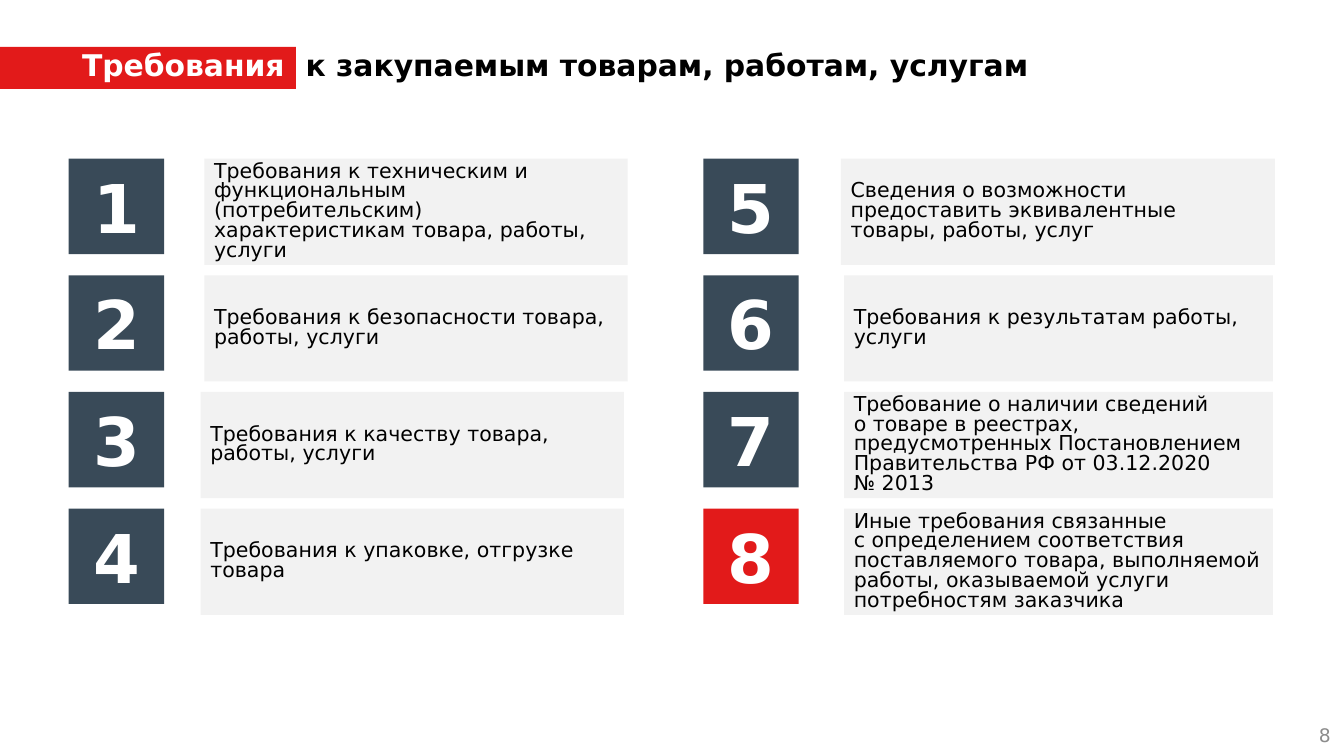
"""Build a slide listing eight procurement requirements in two columns."""
from dataclasses import dataclass

from pptx import Presentation
from pptx.dml.color import RGBColor
from pptx.enum import shapes, text
from pptx.util import Pt


@dataclass(frozen=True)
class Theme:
    """Colours, font and type sizes of the slide."""
    red: RGBColor = RGBColor(0xE2, 0x1A, 0x1A)
    slate: RGBColor = RGBColor(0x39, 0x4A, 0x58)
    panel: RGBColor = RGBColor(0xF2, 0xF2, 0xF2)
    white: RGBColor = RGBColor(0xFF, 0xFF, 0xFF)
    black: RGBColor = RGBColor(0, 0, 0)
    grey: RGBColor = RGBColor(0x8C, 0x8C, 0x8C)
    font: str = "DejaVu Sans"
    title: float = 16
    number: float = 36
    body: float = 11
    footer: float = 10


THEME = Theme()
ROW_TOP, ROW_PITCH = 85, 62.5
BADGE_SIZE, PANEL_HEIGHT = 51.1, 56.9

COLUMNS = [
    (36.8, [
        (109.5, 226.8, "Требования к техническим и функциональным (потребительским) "
                       "характеристикам товара, работы, услуги"),
        (109.5, 226.8, "Требования к безопасности товара, работы, услуги"),
        (107.5, 226.8, "Требования к качеству товара, работы, услуги"),
        (107.5, 226.8, "Требования к упаковке, отгрузке товара"),
    ]),
    (376.8, [
        (450.5, 232.5, "Сведения о возможности предоставить эквивалентные "
                       "товары, работы, услуг"),
        (452.2, 229.7, "Требования к результатам работы, услуги"),
        (452.2, 229.7, "Требование о наличии сведений \vо товаре в реестрах, "
                       "предусмотренных Постановлением Правительства РФ "
                       "от 03.12.2020 \v№ 2013"),
        (452.2, 229.7, "Иные требования связанные \vс определением соответствия "
                       "поставляемого товара, выполняемой работы, оказываемой "
                       "услуги потребностям заказчика"),
    ]),
]


def style_font(font, size, color, bold=False):
    """Apply the theme font with the given size, colour and weight."""
    font.name = THEME.font
    font.size = Pt(size)
    font.color.rgb = color
    font.bold = bold


def set_insets(frame, horizontal, vertical):
    """Set the inner margins of a text frame."""
    frame.margin_left = frame.margin_right = Pt(horizontal)
    frame.margin_top = frame.margin_bottom = Pt(vertical)


def add_block(slide, left, top, width, height, fill):
    """Add a flat filled rectangle."""
    shape = slide.shapes.add_shape(
        shapes.MSO_SHAPE.RECTANGLE, Pt(left), Pt(top), Pt(width), Pt(height))
    shape.shadow.inherit = False
    shape.fill.solid()
    shape.fill.fore_color.rgb = fill
    shape.line.fill.background()
    return shape


def write_block(shape, wording, alignment):
    """Write one vertically centred paragraph into a block."""
    frame = shape.text_frame
    frame.word_wrap = True
    frame.vertical_anchor = text.MSO_ANCHOR.MIDDLE
    set_insets(frame, 5.2, 2.6)
    paragraph = frame.paragraphs[0]
    paragraph.text = wording
    paragraph.alignment = alignment
    return paragraph


def add_title(slide):
    """Fill the title placeholder and lay it over a red band."""
    band = add_block(slide, 0, 25.2, 158.6, 22.5, THEME.red)
    title = slide.shapes.title
    band._element.addnext(title._element)
    title.left, title.top, title.width, title.height = (
        Pt(length) for length in (36.8, 21.6, 626.4, 26.6))
    frame = title.text_frame
    frame.word_wrap = True
    frame.auto_size = text.MSO_AUTO_SIZE.SHAPE_TO_FIT_TEXT
    frame.vertical_anchor = text.MSO_ANCHOR.TOP
    set_insets(frame, 7.2, 3.6)
    paragraph = frame.paragraphs[0]
    paragraph.alignment = text.PP_ALIGN.LEFT
    runs = []
    for wording, color in (("Требования", THEME.white), (" ", THEME.white),
                           ("к закупаемым товарам, работам, услугам", THEME.black)):
        run = paragraph.add_run()
        run.text = wording
        style_font(run.font, THEME.title, color, bold=True)
        runs.append(run)
    runs[1]._r.get_or_add_rPr().set("spc", "560")


def add_requirement(slide, number, badge_left, top, panel, badge_fill):
    """Add a numbered badge and the panel that describes it."""
    badge = add_block(slide, badge_left, top, BADGE_SIZE, BADGE_SIZE, badge_fill)
    paragraph = write_block(badge, str(number), text.PP_ALIGN.CENTER)
    style_font(paragraph.font, THEME.number, THEME.white, bold=True)
    left, width, wording = panel
    box = add_block(slide, left, top, width, PANEL_HEIGHT, THEME.panel)
    paragraph = write_block(box, wording, text.PP_ALIGN.LEFT)
    paragraph.line_spacing = 0.8
    style_font(paragraph.font, THEME.body, THEME.black)


def add_page_number(slide, number):
    """Add the page number in the bottom right corner."""
    box = slide.shapes.add_textbox(Pt(552.2), Pt(383), Pt(167.8), Pt(21.6))
    paragraph = write_block(box, str(number), text.PP_ALIGN.RIGHT)
    set_insets(box.text_frame, 7.2, 3.6)
    style_font(paragraph.font, THEME.footer, THEME.grey)


def main():
    """Build and save the presentation."""
    presentation = Presentation()
    presentation.slide_width, presentation.slide_height = Pt(720), Pt(405)
    slide = presentation.slides.add_slide(
        presentation.slide_layouts.get_by_name("Title Only"))
    add_title(slide)
    count = sum(len(panels) for _, panels in COLUMNS)
    number = 0
    for badge_left, panels in COLUMNS:
        for row, panel in enumerate(panels):
            number += 1
            fill = THEME.red if number == count else THEME.slate
            add_requirement(slide, number, badge_left,
                            ROW_TOP + row * ROW_PITCH, panel, fill)
    add_page_number(slide, 8)
    presentation.save("out.pptx")


if __name__ == "__main__":
    main()
